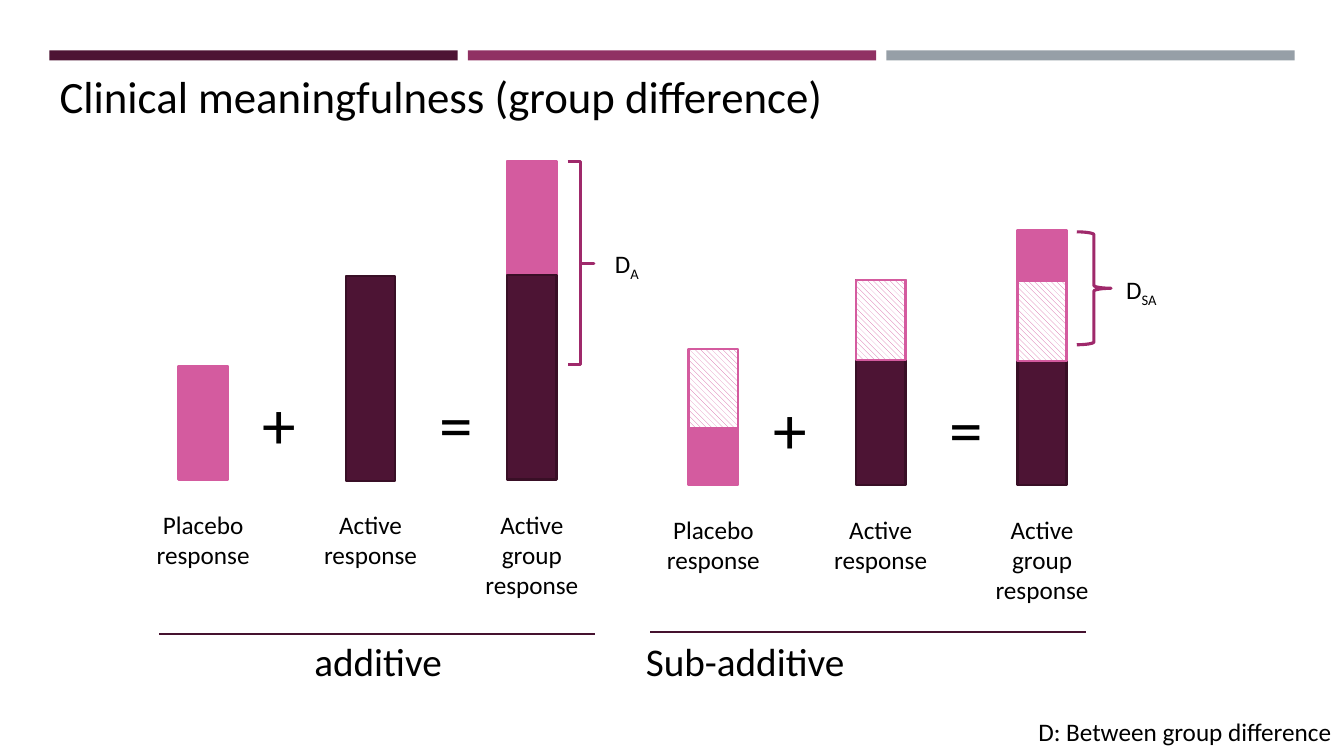
"""Builds the slide on additive and sub-additive group differences."""
from pptx import Presentation
from pptx.dml.color import RGBColor
from pptx.enum import dml, shapes, text
from pptx.oxml.ns import qn
from pptx.util import Inches, Pt
from lxml import etree

PLUM = RGBColor(0x4D, 0x14, 0x34)
PLUM_EDGE = RGBColor(0x39, 0x0F, 0x26)
RULE = RGBColor(0x45, 0x12, 0x2F)
BERRY = RGBColor(0x90, 0x31, 0x63)
GREY = RGBColor(0x96, 0x9F, 0xA7)
PINK = RGBColor(0xD4, 0x5B, 0x9F)
BRACE = RGBColor(0x9F, 0x29, 0x6B)
WHITE = RGBColor(0xFF, 0xFF, 0xFF)
BLACK = RGBColor(0, 0, 0)
FONT = "Calibri"
BAR_WIDTH = 0.49
BAR_X = (1.77, 3.43, 5.03)
LABELS = ("Placebo response", "Active response", "Active group response")


def format_run(r, size):
    """Give a run the slide's font."""
    r.font.name = FONT
    r.font.size = Pt(size)
    r.font.color.rgb = BLACK


def add_title(s, words):
    """Fill and place the title placeholder."""
    sp = s.shapes.title
    sp.left, sp.top, sp.width, sp.height = map(Inches, (0.49, 0.63, 10.91, 0.64))
    tf = sp.text_frame
    tf.text = words
    tf.vertical_anchor = text.MSO_ANCHOR.MIDDLE
    p = tf.paragraphs[0]
    p.alignment = text.PP_ALIGN.LEFT
    format_run(p.runs[0], 32)


def add_text(s, x, y, w, h, words, size, align=text.PP_ALIGN.LEFT, subscript=""):
    """Add a wrapped text box, with an optional subscript."""
    tf = s.shapes.add_textbox(*map(Inches, (x, y, w, h))).text_frame
    tf.word_wrap = True
    tf.text = words
    for p in tf.paragraphs:
        p.alignment = align
        format_run(p.runs[0], size)
    if subscript:
        r = tf.paragraphs[0].add_run()
        r.text = subscript
        format_run(r, size)
        r._r.get_or_add_rPr().set("baseline", "-25000")


def add_block(s, x, y, w, h, fill, edge=None):
    """Add a solid rectangle."""
    sp = s.shapes.add_shape(shapes.MSO_SHAPE.RECTANGLE, *map(Inches, (x, y, w, h)))
    sp.shadow.inherit = False
    sp.fill.solid()
    sp.fill.fore_color.rgb = fill
    if edge is None:
        sp.line.fill.background()
    else:
        sp.line.color.rgb = edge
        sp.line.width = Pt(1.75)
    return sp


def add_pink_bar(s, x, y, h):
    """Add a placebo bar."""
    return add_block(s, x, y, BAR_WIDTH, h, PINK, PINK)


def add_plum_bar(s, x, y, h):
    """Add an active bar."""
    add_block(s, x, y, BAR_WIDTH, h, PLUM, PLUM_EDGE)


def add_hatched_bar(s, x, y):
    """Add the hatched part shared by both responses."""
    fill = add_pink_bar(s, x, y, 0.79).fill
    fill.patterned()
    fill.pattern = dml.MSO_PATTERN.WIDE_DOWNWARD_DIAGONAL
    fill.fore_color.rgb = PINK
    fill.back_color.rgb = WHITE


def add_brace(s, x, y, w, h, curve=0.08333):
    """Add a right brace with the given curvature."""
    sp = s.shapes.add_shape(shapes.MSO_SHAPE.RIGHT_BRACE, *map(Inches, (x, y, w, h)))
    sp.shadow.inherit = False
    sp.adjustments[0] = curve
    sp.fill.background()
    sp.line.color.rgb = BRACE
    sp.line.width = Pt(2.25)


def add_rule(s, x, y, w):
    """Add a thin horizontal line."""
    line = s.shapes.add_connector(shapes.MSO_CONNECTOR.STRAIGHT,
                                  *map(Inches, (x, y, x + w, y)))
    line.line.color.rgb = RULE
    line.line.width = Pt(1)
    etree.SubElement(line._element.spPr, qn("a:effectLst"))


def add_equation(s, dx, dy, labels):
    """Add the signs and bar labels of one panel."""
    for x, sign in ((2.51, "+"), (4.26, "=")):
        add_text(s, x + dx, 3.74 + dy, 0.59, 0.91, sign, 48)
    for x, label in zip(BAR_X, labels):
        height = 1.01 if "group" in label else 0.71
        add_text(s, x + dx - 0.38, 5 + dy, 1.25, height, label, 18,
                 text.PP_ALIGN.CENTER)


def add_additive(s):
    """Add the additive panel."""
    placebo, active, group = BAR_X
    add_pink_bar(s, placebo, 3.63, 1.13)
    add_plum_bar(s, active, 2.74, 2.03)
    add_pink_bar(s, group, 1.6, 1.13)
    add_plum_bar(s, group, 2.73, 2.03)
    add_equation(s, 0, 0, LABELS)
    add_brace(s, 5.63, 1.6, 0.26, 2.02, 0)
    add_text(s, 6, 2.41, 0.63, 0.4, "D", 18, subscript="A")
    add_rule(s, 1.58, 6.29, 4.32)
    add_text(s, 1.59, 6.27, 4.32, 0.57, "additive", 28, text.PP_ALIGN.CENTER)


def add_sub_additive(s):
    """Add the sub-additive panel."""
    dx = 5.06
    placebo, active, group = (x + dx for x in BAR_X)
    add_pink_bar(s, placebo, 3.68, 1.13)
    add_plum_bar(s, active, 2.78, 2.03)
    add_pink_bar(s, group, 2.28, 0.63)
    add_plum_bar(s, group, 3.15, 1.66)
    for x, y in ((placebo, 3.46), (active, 2.78), (group, 2.79)):
        add_hatched_bar(s, x, y)
    add_equation(s, dx, 0.05, ("Placebo\nresponse",) + LABELS[1:])
    add_brace(s, 10.68, 2.3, 0.34, 1.12)
    add_text(s, 11.07, 2.67, 0.63, 0.4, "D", 18, subscript="SA")
    add_rule(s, 6.45, 6.27, 4.32)
    add_text(s, 5.23, 6.27, 4.32, 0.57, "Sub-additive", 28, text.PP_ALIGN.CENTER)


def main():
    """Build and save the slide."""
    prs = Presentation()
    prs.slide_width, prs.slide_height = Inches(13.33), Inches(7.5)
    s = prs.slides.add_slide(prs.slide_layouts[5])
    for i, colour in enumerate((PLUM, BERRY, GREY)):
        add_block(s, 0.49 + 4.15 * i, 0.5, 4.05, 0.1, colour)
    add_title(s, "Clinical meaningfulness (group difference)")
    add_additive(s)
    add_sub_additive(s)
    add_text(s, 10.2, 7.06, 3.24, 0.4, "D: Between group difference", 18)
    prs.save("out.pptx")


if __name__ == "__main__":
    main()
